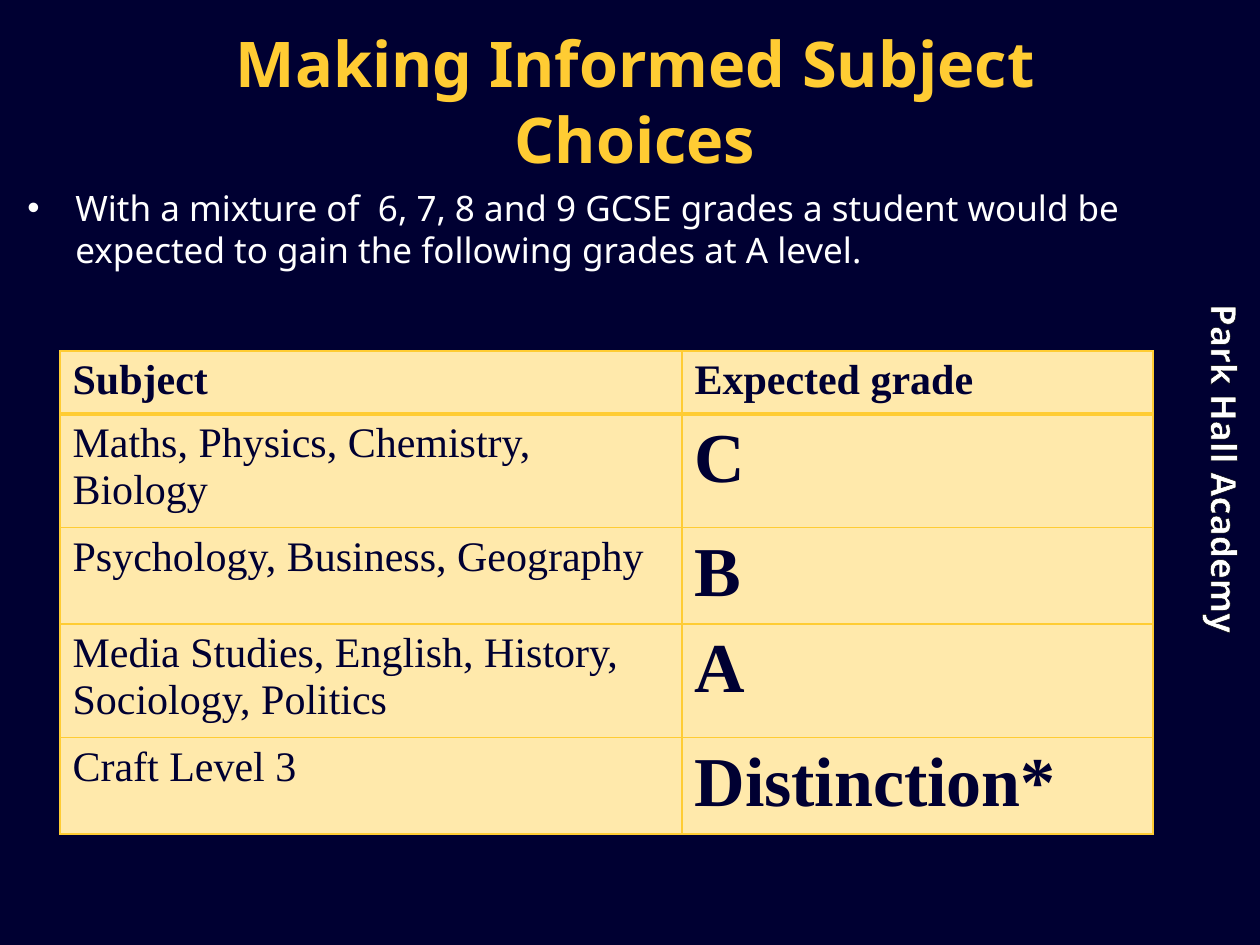
"""Build a slide on expected A level grades for each group of subjects."""
import pptx
import pptx.dml.color
import pptx.enum.text
import pptx.oxml
import pptx.oxml.ns
import pptx.util

PX = 914400 // 126
NAVY = pptx.dml.color.RGBColor(0x00, 0x00, 0x32)
INK = pptx.dml.color.RGBColor(0x00, 0x00, 0x33)
GOLD = pptx.dml.color.RGBColor(0xFF, 0xCC, 0x33)
CREAM = pptx.dml.color.RGBColor(0xFF, 0xE9, 0xAB)
WHITE = pptx.dml.color.RGBColor(0xFF, 0xFF, 0xFF)
BLACK = pptx.dml.color.RGBColor(0x00, 0x00, 0x00)
CENTER = pptx.enum.text.PP_ALIGN.CENTER


def line_element(tag, width, color):
    return pptx.oxml.parse_xml(
        f'<a:{tag} {pptx.oxml.ns.nsdecls("a")} w="{int(pptx.util.Pt(width))}">'
        f'<a:solidFill><a:srgbClr val="{color}"/></a:solidFill></a:{tag}>')


def write(frame, text, size, color, font="Noto Sans", bold=False, align=None, spacing=None):
    para = frame.paragraphs[0]
    para.alignment = align
    para.line_spacing = spacing
    span = para.add_run()
    span.text = text
    span.font.name = font
    span.font.size = pptx.util.Pt(size)
    span.font.bold = bold
    span.font.color.rgb = color
    return para


deck = pptx.Presentation()
deck.slide_width, deck.slide_height = 1260 * PX, 945 * PX
page = deck.slides.add_slide(deck.slide_layouts[6])
page.background.fill.solid()
page.background.fill.fore_color.rgb = NAVY

school = page.shapes.add_textbox(853 * PX, 428 * PX, 717 * PX, 81 * PX)
school.rotation = 90
school.text_frame.word_wrap = False
para = write(school.text_frame, "Park Hall Academy", 20, WHITE, bold=True, align=CENTER)
para.runs[0].font._element.insert(0, line_element("ln", 0.75, BLACK))

title = page.shapes.add_textbox(100 * PX, 54 * PX, 1070 * PX, 93 * PX)
title.text_frame.word_wrap = True
title.text_frame.vertical_anchor = pptx.enum.text.MSO_ANCHOR.MIDDLE
write(title.text_frame, "Making Informed Subject Choices", 36, GOLD, bold=True,
      align=CENTER, spacing=pptx.util.Pt(43))

body = page.shapes.add_textbox(15 * PX, 180 * PX, 1150 * PX, 714 * PX)
body.text_frame.word_wrap = True
para = write(body.text_frame,
             "With a mixture of  6, 7, 8 and 9 GCSE grades a student would be "
             "expected to gain the following grades at A level.",
             20, WHITE, spacing=pptx.util.Pt(24))
para.space_after = pptx.util.Pt(3)
properties = para._p.get_or_add_pPr()
properties.set("marL", str(48 * PX))
properties.set("indent", str(-48 * PX))
for bullet in ('buFont {} typeface="Arial"', 'buChar {} char="•"'):
    properties.append(pptx.oxml.parse_xml(
        "<a:" + bullet.format(pptx.oxml.ns.nsdecls("a")) + "/>"))

ROWS = [
    ("Subject", "Expected grade"),
    ("Maths, Physics, Chemistry, Biology", "C"),
    ("Psychology, Business, Geography", "B"),
    ("Media Studies, English, History, Sociology, Politics", "A"),
    ("Craft Level 3", "Distinction*"),
]
ROW_HEIGHT = 52
grades = page.shapes.add_table(
    len(ROWS), 2, 60 * PX, 351 * PX, 1093 * PX, len(ROWS) * ROW_HEIGHT * PX).table
for column, width in zip(grades.columns, (622, 471)):
    column.width = width * PX

for row, texts in enumerate(ROWS):
    for column, text in enumerate(texts):
        cell = grades.cell(row, column)
        cell.fill.solid()
        cell.fill.fore_color.rgb = CREAM
        header = row == 0
        write(cell.text_frame, text, 40 if column and not header else 24,
              INK if header else NAVY, font="Times New Roman",
              bold=header or column == 1)
        borders = {"lnL": 1, "lnR": 1, "lnT": 3 if row == 1 else 1, "lnB": 3 if header else 1}
        for place, (side, weight) in enumerate(borders.items()):
            cell._tc.get_or_add_tcPr().insert(place, line_element(side, weight, GOLD))

deck.save("out.pptx")
